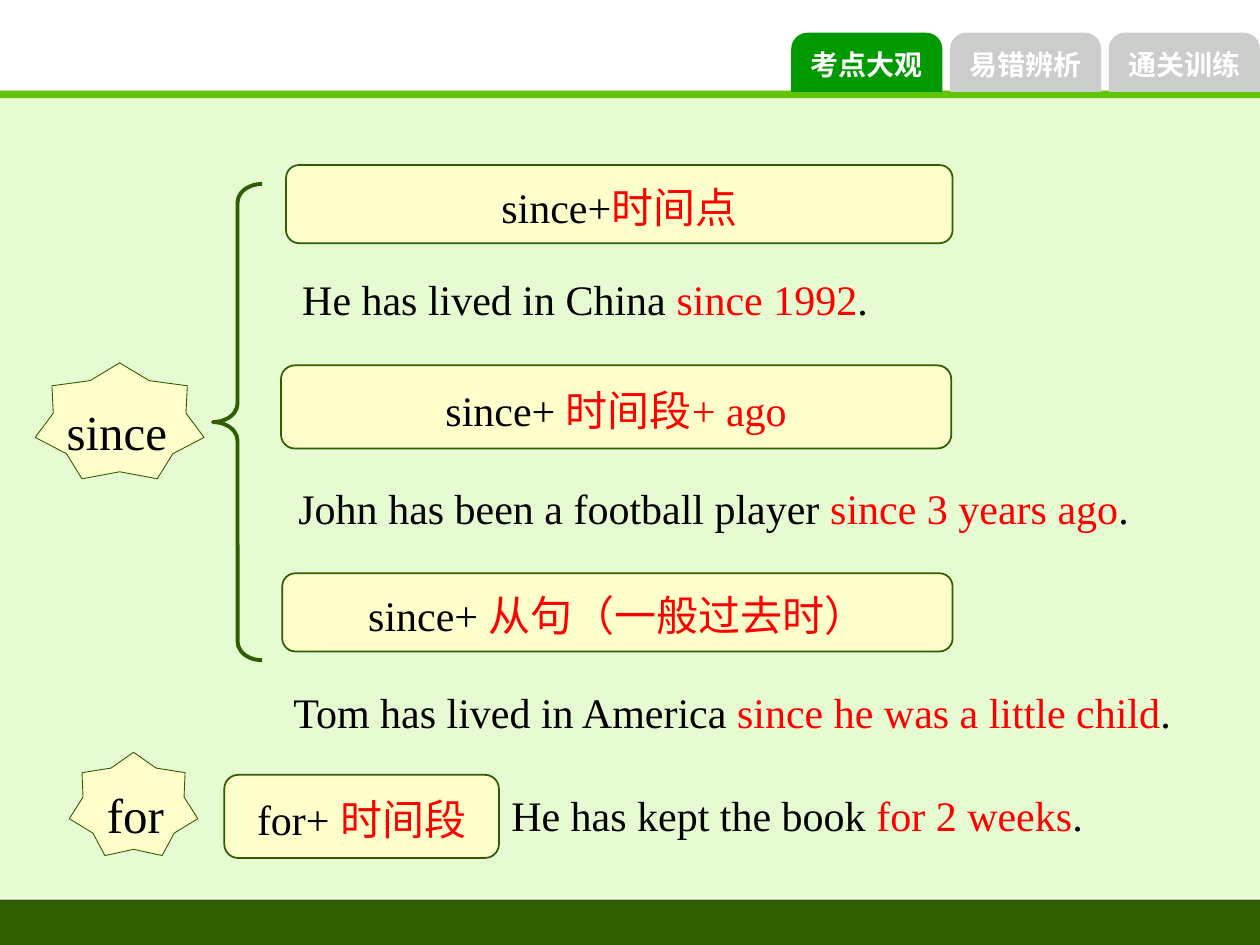
from lxml.etree import SubElement
from pptx import Presentation
from pptx.dml.color import RGBColor
from pptx.enum.shapes import MSO_SHAPE
from pptx.enum.text import MSO_ANCHOR, PP_ALIGN
from pptx.oxml.ns import qn
from pptx.util import Inches, Pt

COLORS = {
    "white": "FFFFFF", "black": "000000", "red": "FF0000",
    "page": "E6FBD1", "dark": "2F5E01", "rule": "61C400",
    "active": "009900", "inactive": "CBCDCB", "cream": "FFFFCC",
}
LATIN = "Times New Roman"
CJK = "Noto Sans CJK SC"


def rgb(name):
    return RGBColor.from_string(COLORS[name])


def add_run(p, text, color, size, font=LATIN, bold=False):
    r = p.add_run()
    r.text = text
    r.font.size = Pt(size)
    r.font.bold = bold
    r.font.color.rgb = rgb(color)
    r.font.name = font
    SubElement(r.font._element, qn("a:ea")).set("typeface", CJK)


def add_shape(s, kind, box, fill=None, line=None, adj=()):
    """Preset shape; line is the outline width in points."""
    sp = s.shapes.add_shape(kind, *map(Inches, box))
    sp.shadow.inherit = False
    for i, value in enumerate(adj):
        sp.adjustments[i] = value
    if fill:
        sp.fill.solid()
        sp.fill.fore_color.rgb = rgb(fill)
    else:
        sp.fill.background()
    if line:
        sp.line.color.rgb = rgb("dark")
        sp.line.width = Pt(line)
    else:
        sp.line.fill.background()
    return sp


def add_tab(s, left, text, fill):
    sp = add_shape(s, MSO_SHAPE.ROUND_2_SAME_RECTANGLE,
                   (left, 0.26, 1.2, 0.47), fill, adj=(0.275, 0))
    tf = sp.text_frame
    tf.vertical_anchor = MSO_ANCHOR.MIDDLE
    tf.paragraphs[0].alignment = PP_ALIGN.CENTER
    add_run(tf.paragraphs[0], text, "white", 16, CJK, True)


def add_pattern(s, box, word, rest):
    """Cream box: keyword in black, what follows it in red."""
    sp = add_shape(s, MSO_SHAPE.ROUNDED_RECTANGLE, box, "cream", 1)
    tf = sp.text_frame
    tf.word_wrap = False
    tf.vertical_anchor = MSO_ANCHOR.MIDDLE
    tf.margin_top, tf.margin_bottom = Inches(0.2), Inches(0.16)
    p = tf.paragraphs[0]
    p.alignment = PP_ALIGN.CENTER
    add_run(p, word, "black", 24)
    add_run(p, rest, "red", 24)


def add_text(s, box, runs, size, spacing=1.0, anchor=MSO_ANCHOR.TOP):
    tf = s.shapes.add_textbox(*map(Inches, box)).text_frame
    tf.word_wrap = True
    tf.vertical_anchor = anchor
    p = tf.paragraphs[0]
    p.line_spacing = spacing
    for text, color in runs:
        add_run(p, text, color, size)


def add_example(s, box, start, key, spacing=1.0):
    runs = [(start, "black"), (key, "red"), (".", "black")]
    add_text(s, box, runs, 24, spacing)


def add_star(s, box, label_box, word):
    add_shape(s, MSO_SHAPE.STAR_7_POINT, box, "cream", 0.5, (0.393,))
    add_text(s, label_box, [(word, "black")], 28, 1.5, MSO_ANCHOR.MIDDLE)


def main():
    prs = Presentation()
    prs.slide_width, prs.slide_height = Inches(10), Inches(7.5)
    s = prs.slides.add_slide(prs.slide_layouts[6])

    # Page background and bands
    for top, height, fill in ((0.72, 6.41, "page"), (7.14, 0.36, "dark"),
                              (0.72, 0.06, "rule")):
        add_shape(s, MSO_SHAPE.RECTANGLE, (0, top, 10, height), fill)

    # Navigation tabs
    for i, text in enumerate(("考点大观", "易错辨析", "通关训练")):
        add_tab(s, 6.28 + 1.26 * i, text, "inactive" if i else "active")

    # Patterns
    for box, word, rest in (
        ((2.27, 1.31, 5.29, 0.62), "since+", "时间点"),
        ((2.23, 2.9, 5.32, 0.66), "since+ ", "时间段+ ago"),
        ((2.24, 4.55, 5.32, 0.62), "since+ ", "从句（一般过去时）"),
        ((1.78, 6.15, 2.18, 0.66), "for+ ", "时间段"),
    ):
        add_pattern(s, box, word, rest)

    # Example sentences
    add_example(s, (2.3, 2.12, 6.19, 0.51),
                "He has lived in China ", "since 1992")
    add_example(s, (2.27, 3.58, 7.3, 0.71),
                "John has been a football player ", "since 3 years ago", 1.5)
    add_example(s, (2.23, 5.2, 7.34, 0.71),
                "Tom has lived in America ", "since he was a little child", 1.5)
    add_example(s, (3.96, 6.22, 5.46, 0.51),
                "He has kept the book ", "for 2 weeks")

    # Keywords and brace
    add_shape(s, MSO_SHAPE.LEFT_BRACE, (1.69, 1.46, 0.39, 3.78),
              line=2.25, adj=(0.378, 0.5))
    add_star(s, (0.28, 2.88, 1.34, 0.92), (0.43, 2.8, 1.14, 1), "since")
    add_star(s, (0.55, 5.97, 1.02, 0.82), (0.75, 5.89, 0.82, 0.9), "for")

    prs.save("out.pptx")


if __name__ == "__main__":
    main()
